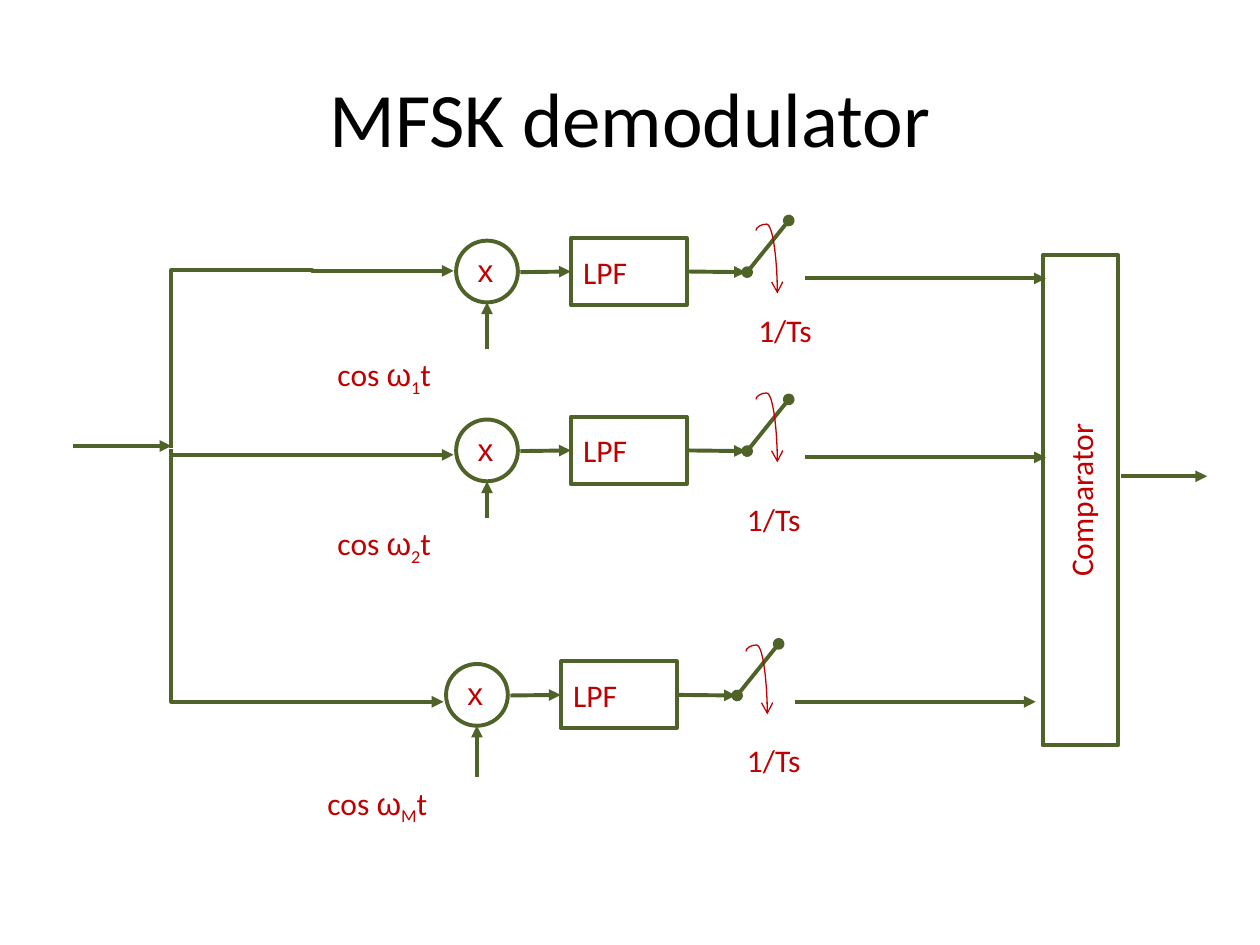
"""Builds a slide with the block diagram of an MFSK demodulator."""
import pptx
import pptx.dml.color
import pptx.enum.shapes
import pptx.enum.text
import pptx.oxml.ns
import pptx.util
from lxml import etree

Inches = pptx.util.Inches
Pt = pptx.util.Pt
qn = pptx.oxml.ns.qn
SHAPE = pptx.enum.shapes.MSO_SHAPE
CONNECTOR = pptx.enum.shapes.MSO_CONNECTOR
ALIGN = pptx.enum.text.PP_ALIGN
ANCHOR = pptx.enum.text.MSO_ANCHOR

COLORS = {"block": "4F6228", "label": "C00000", "title": "000000", "paper": "FFFFFF"}
SPLIT = (1.36, 3.56)


def rgb(name):
    """Return a palette colour."""
    return pptx.dml.color.RGBColor.from_string(COLORS[name])


def add_run(paragraph, text, font="Calibri", size=18, color="label", baseline=None):
    """Append one formatted run to a paragraph."""
    run = paragraph.add_run()
    run.text = text
    run.font.name = font
    run.font.size = Pt(size)
    run.font.color.rgb = rgb(color)
    if baseline is not None:
        run.font._element.set("baseline", str(baseline * 1000))


def add_block(slide, kind, box, outline="block", wrap=False):
    """Add an unfilled outlined block with left-aligned text."""
    block = slide.shapes.add_shape(kind, *map(Inches, box))
    block.shadow.inherit = False
    block.fill.background()
    block.line.color.rgb = rgb(outline)
    block.line.width = Pt(2.25)
    frame = block.text_frame
    frame.word_wrap = wrap
    frame.vertical_anchor = ANCHOR.MIDDLE
    frame.paragraphs[0].alignment = ALIGN.LEFT
    return block


def style_connector(connector, color="block", width=2.25, head=None, tail=None):
    """Set the colour, width and arrowheads of a connector."""
    connector.line.color.rgb = rgb(color)
    connector.line.width = Pt(width)
    line = connector._element.spPr.find(qn("a:ln"))
    for tag, arrow in (("a:headEnd", head), ("a:tailEnd", tail)):
        if arrow:
            etree.SubElement(line, qn(tag)).set("type", arrow)
    etree.SubElement(connector._element.spPr, qn("a:effectLst"))


def add_line(slide, start, end, head=None, tail="triangle"):
    """Add a straight signal line between two points."""
    line = slide.shapes.add_connector(CONNECTOR.STRAIGHT, *map(Inches, (*start, *end)))
    style_connector(line, head=head, tail=tail)
    return line


def add_turned(slide, kind, start, end, preset, rotation, flips, adjusts=(), **style):
    """Add a bent or curved connector turned by a quarter or three quarters."""
    width, height = abs(end[1] - start[1]), abs(end[0] - start[0])
    left = (start[0] + end[0] - width) / 2
    top = (start[1] + end[1] - height) / 2
    connector = slide.shapes.add_connector(
        kind, *map(Inches, (left, top, left + width, top + height)))
    properties = connector._element.spPr
    transform = properties.find(qn("a:xfrm"))
    transform.set("rot", str(rotation * 60000))
    for flip in flips:
        transform.set(flip, "1")
    geometry = properties.find(qn("a:prstGeom"))
    geometry.set("prst", preset)
    guides = geometry.find(qn("a:avLst"))
    if guides is None:
        guides = etree.SubElement(geometry, qn("a:avLst"))
    for number, value in enumerate(adjusts, 1):
        name = "adj" if len(adjusts) == 1 and preset == "bentConnector2" else f"adj{number}"
        guide = etree.SubElement(guides, qn("a:gd"))
        guide.set("name", name)
        guide.set("fmla", f"val {round(value * 100000)}")
    style_connector(connector, **style)


def add_title(slide, box):
    """Place the slide title."""
    title = slide.shapes.title
    title.left, title.top, title.width, title.height = map(Inches, box)
    title.text_frame.vertical_anchor = ANCHOR.MIDDLE
    paragraph = title.text_frame.paragraphs[0]
    paragraph.alignment = ALIGN.CENTER
    add_run(paragraph, "MFSK demodulator", size=44, color="title")


def add_carrier(slide, box, index):
    """Place the label of a local carrier."""
    carrier = add_block(slide, SHAPE.RECTANGLE, box, outline="paper", wrap=True)
    carrier.text_frame.vertical_anchor = ANCHOR.TOP
    paragraph = carrier.text_frame.paragraphs[0]
    add_run(paragraph, "cos ")
    add_run(paragraph, "ω", font="Arial")
    add_run(paragraph, index, baseline=-25)
    add_run(paragraph, "t", baseline=0)


def add_sampler(slide, pivot, swing_top, rate_at):
    """Place the sampling switch, its swing arrow and its rate."""
    x, y = pivot
    add_line(slide, pivot, (x + 0.33, y - 0.41), head="oval", tail="oval")
    add_turned(slide, CONNECTOR.CURVE, (x + 0.07, swing_top), (x + 0.24, swing_top + 0.5),
               "curvedConnector3", 270, ["flipH"], [-0.103],
               color="label", width=0.75, tail="arrow")
    rate = slide.shapes.add_textbox(*map(Inches, (*rate_at, 0.67, 0.42)))
    rate.text_frame.word_wrap = True
    add_run(rate.text_frame.paragraphs[0], "1/Ts")


def add_channel(slide, left, top, index, carrier_top, swing_top, rate_at):
    """Place one correlator channel from its mixer to the comparator."""
    size = 0.49
    center, middle = left + size / 2, top + 0.25
    mixer = add_block(slide, SHAPE.OVAL, (left, top, size, size))
    mixer.text_frame.margin_top = Inches(0.02)
    add_run(mixer.text_frame.paragraphs[0], "x", font="Arial")
    add_carrier(slide, (left - 1.04, carrier_top, 2.59, 0.4), index)
    add_line(slide, (center, top + size), (center, carrier_top), head="triangle", tail=None)
    lowpass = add_block(slide, SHAPE.RECTANGLE, (left + 0.91, top - 0.02, 0.92, 0.53))
    add_run(lowpass.text_frame.paragraphs[0], "LPF")
    mixed = add_line(slide, (left + 0.51, middle), (left + 0.91, middle))
    mixed.end_connect(lowpass, 1)
    filtered = add_line(slide, (left + 1.83, middle), (left + 2.3, middle))
    filtered.begin_connect(lowpass, 3)
    add_sampler(slide, (left + 2.31, middle), swing_top, rate_at)
    add_line(slide, (left + 2.77, top + 0.3), (left + 4.68, top + 0.3))


def add_splitter(slide):
    """Place the input arrow and its branches to the mixers."""
    add_line(slide, (0.58, 3.54), (SPLIT[0], 3.54))
    add_turned(slide, CONNECTOR.ELBOW, SPLIT, (3.6, 2.15), "bentConnector4",
               90, ["flipH", "flipV"], [1.004, 0.5], tail="triangle")
    for start, end in ((SPLIT, (3.6, 3.61)), ((SPLIT[0], 3.62), (3.52, 5.57))):
        add_turned(slide, CONNECTOR.ELBOW, start, end, "bentConnector2",
                   270, ["flipH"], tail="triangle")


def add_comparator(slide, box):
    """Place the upright comparator and the output arrow."""
    comparator = add_block(slide, SHAPE.RECTANGLE, box)
    comparator.rotation = 270
    paragraph = comparator.text_frame.paragraphs[0]
    paragraph.alignment = ALIGN.CENTER
    add_run(paragraph, "Comparator")
    add_line(slide, (8.9, 3.78), (9.58, 3.78))


def main():
    """Build and save the slide."""
    deck = pptx.Presentation()
    deck.slide_width, deck.slide_height = Inches(10), Inches(7.5)
    slide = deck.slides.add_slide(deck.slide_layouts[5])
    add_title(slide, (0.5, 0.3, 9, 1.25))
    add_splitter(slide)
    add_comparator(slide, (6.63, 3.67, 3.89, 0.6))
    channels = (
        (3.62, 1.91, "1", 2.77, 1.83, (5.92, 2.42)),
        (3.62, 3.33, "2", 4.11, 3.17, (5.83, 3.92)),
        (3.54, 5.27, "M", 6.17, 5.17, (5.83, 5.83)),
    )
    for channel in channels:
        add_channel(slide, *channel)
    deck.save("out.pptx")


if __name__ == "__main__":
    main()
